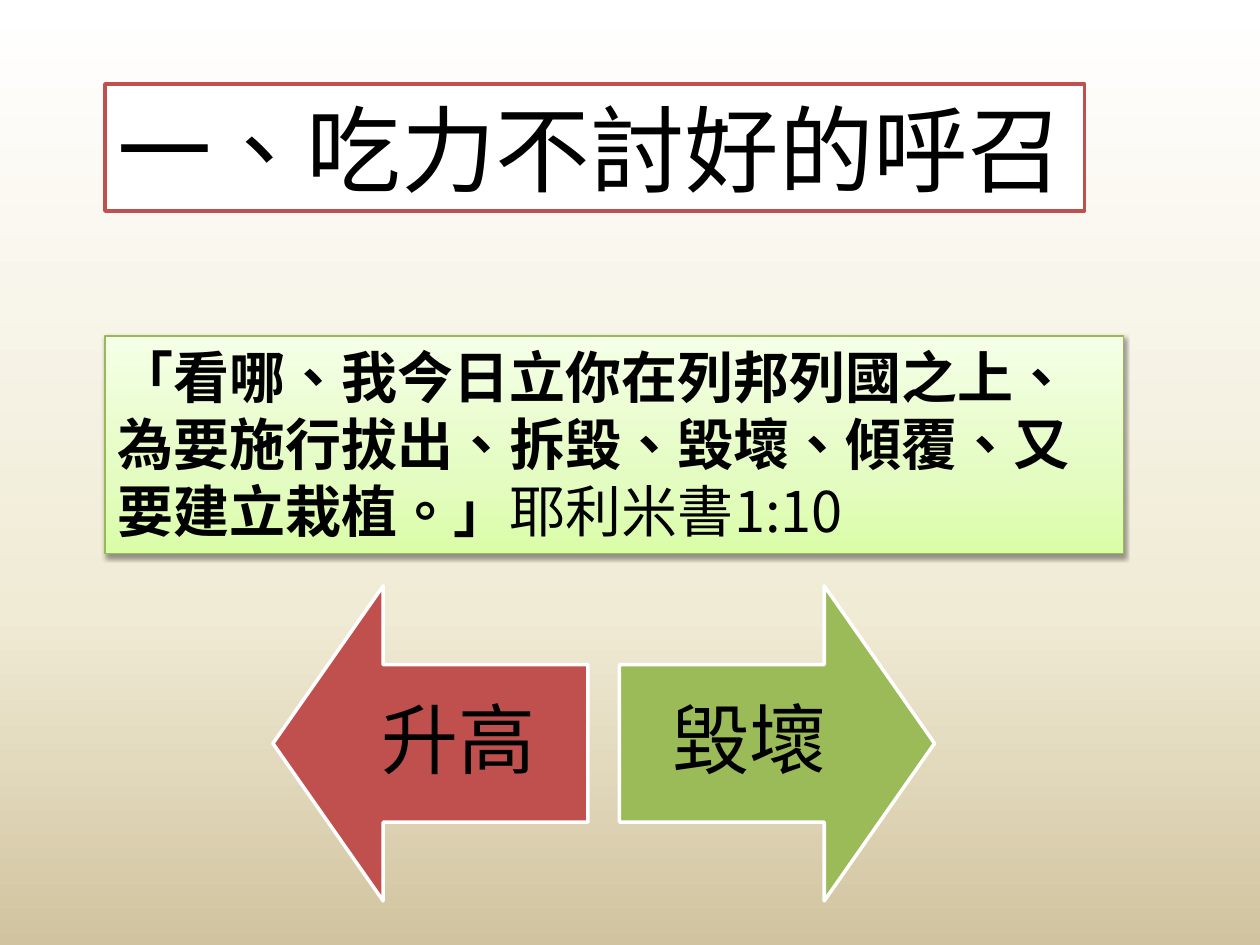
import lxml.etree
import pptx
import pptx.dml.color
import pptx.enum.lang
import pptx.enum.shapes
import pptx.enum.text
import pptx.oxml
import pptx.oxml.ns
import pptx.util

RGBColor = pptx.dml.color.RGBColor
Anchor = pptx.enum.text.MSO_ANCHOR
Align = pptx.enum.text.PP_ALIGN

WHITE = RGBColor(0xFF, 0xFF, 0xFF)
BLACK = RGBColor(0, 0, 0)
RED = RGBColor(0xC0, 0x50, 0x4D)
GREEN = RGBColor(0x9B, 0xBB, 0x59)
GREEN_EDGE = RGBColor(0x98, 0xB9, 0x55)
SAND = [(0, WHITE), (65, RGBColor(0xF0, 0xEB, 0xD5)), (100, RGBColor(0xD1, 0xC3, 0x9F))]
LIME = [(0, RGBColor(0xDA, 0xFD, 0xA7)), (35, RGBColor(0xE4, 0xFC, 0xC2)),
        (100, RGBColor(0xF5, 0xFF, 0xE7))]

# The grid has 12 columns and 9 rows, each 10/12 inch.
COLUMNS, ROWS = 12, 9
LATO, NOTO = "Lato", "Noto Sans CJK SC"


class Slide:
    def __init__(self, deck):
        self.page = deck.slides.add_slide(deck.slide_layouts[5])
        self.column = deck.slide_width / COLUMNS
        self.row = deck.slide_height / ROWS

    def place(self, left, top, width, height):
        """Turn columns and rows into lengths."""
        return (int(left * self.column), int(top * self.row),
                int(width * self.column), int(height * self.row))

    def gradient(self, fill, element, stops, angle):
        fill.gradient()
        fill.gradient_angle = angle
        stop_list = element.xpath(".//a:gradFill/a:gsLst")[0]
        stop_list.clear()
        for percent, color in stops:
            stop = lxml.etree.SubElement(stop_list, pptx.oxml.ns.qn("a:gs"), pos=str(percent * 1000))
            lxml.etree.SubElement(stop, pptx.oxml.ns.qn("a:srgbClr"), val=str(color))

    def outline(self, shape, color, width):
        shape.line.color.rgb = color
        shape.line.width = pptx.util.Pt(width)

    def soft_shadow(self, shape):
        shape.shadow.inherit = False
        effects = shape.element.spPr.find(pptx.oxml.ns.qn("a:effectLst"))
        effects.append(pptx.oxml.parse_xml(
            f'<a:outerShdw {pptx.oxml.ns.nsdecls("a")} blurRad="40000" dist="20000" '
            'dir="5400000" rotWithShape="0"><a:srgbClr val="000000">'
            '<a:alpha val="38000"/></a:srgbClr></a:outerShdw>'))

    def set_text(self, shape, spans, size, font=LATO, align=Align.LEFT, anchor=Anchor.MIDDLE, wrap=True):
        """Fill one paragraph with (text, bold) spans."""
        frame = shape.text_frame
        frame.word_wrap = wrap
        frame.vertical_anchor = anchor
        para = frame.paragraphs[0]
        para.alignment = align
        para.font.name = font
        para.font.size = pptx.util.Pt(size)
        para.font.color.rgb = BLACK
        for text, bold in spans:
            span = para.add_run()
            span.text = text
            span.font.bold = bold
            span.font.language_id = pptx.enum.lang.MSO_LANGUAGE_ID.TRADITIONAL_CHINESE
        return para

    def background(self, stops):
        self.gradient(self.page.background.fill, self.page.element, stops, 270)

    def title(self, text, *area):
        title = self.page.shapes.title
        title.left, title.top, title.width, title.height = self.place(*area)
        title.fill.solid()
        title.fill.fore_color.rgb = WHITE
        self.outline(title, RED, 2)
        self.set_text(title, [(text, False)], 54, wrap=False)
        title.text_frame.auto_size = pptx.enum.text.MSO_AUTO_SIZE.NONE

    def verse(self, spans, *area):
        box = self.page.shapes.add_shape(
            pptx.enum.shapes.MSO_SHAPE.RECTANGLE, *self.place(*area))
        self.gradient(box.fill, box.element, LIME, 90)
        self.outline(box, GREEN_EDGE, 0.75)
        self.soft_shadow(box)
        self.set_text(box, spans, 32, NOTO, anchor=Anchor.TOP)

    def arrow(self, text, color, rotation, left, label_left):
        top, size = 5.58, 3
        arrow = self.page.shapes.add_shape(
            pptx.enum.shapes.MSO_SHAPE.UP_ARROW, *self.place(left, top, size, size))
        arrow.rotation = rotation
        arrow.adjustments[0], arrow.adjustments[1] = 0.5, 0.35
        arrow.shadow.inherit = False
        arrow.fill.solid()
        arrow.fill.fore_color.rgb = color
        self.outline(arrow, WHITE, 2)
        label = self.page.shapes.add_textbox(
            *self.place(label_left, top + size / 4, 2.47, size / 2))
        frame = label.text_frame
        frame.margin_left = frame.margin_right = pptx.util.Inches(0.34)
        frame.margin_top = frame.margin_bottom = pptx.util.Inches(0.34)
        para = self.set_text(label, [(text, False)], 44, align=Align.CENTER)
        para.line_spacing = 0.9


def main():
    deck = pptx.Presentation()
    deck.slide_width = pptx.util.Inches(10)
    deck.slide_height = pptx.util.Inches(7.5)
    slide = Slide(deck)
    slide.background(SAND)
    slide.title("一、吃力不討好的呼召", 1, 0.8, 9.33, 1.21)
    slide.verse([("「看哪、我今日立你在列邦列國之上、為要施行拔出、拆毀、毀壞、傾覆、又要建立栽植。」", True),
                 ("耶利米書1:10", False)], 1, 3.2, 9.7, 2.07)
    slide.arrow("升高", RED, 270, 2.6, 3.13)
    slide.arrow("毀壞", GREEN, 90, 5.9, 5.9)
    deck.save("out.pptx")


if __name__ == "__main__":
    main()
